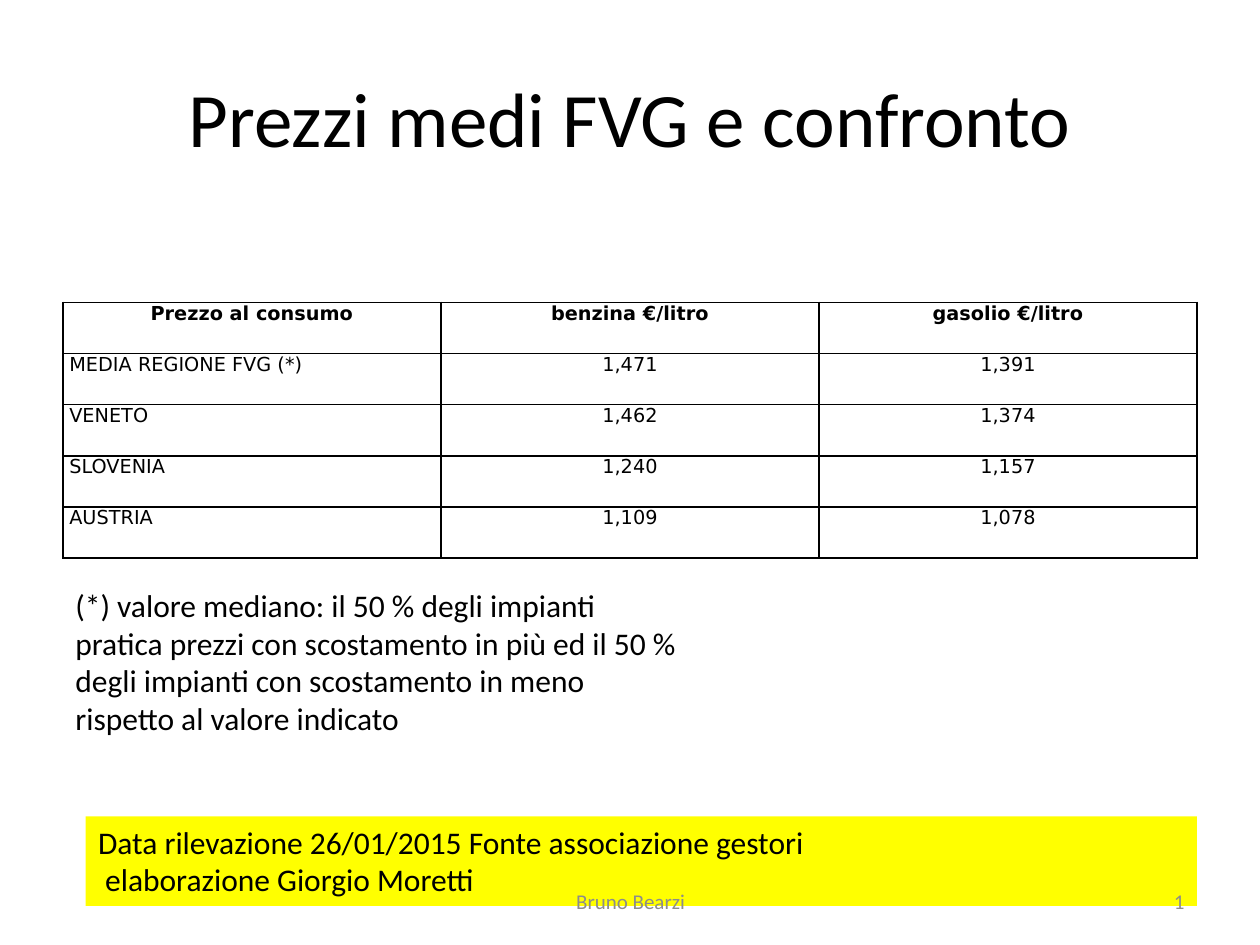
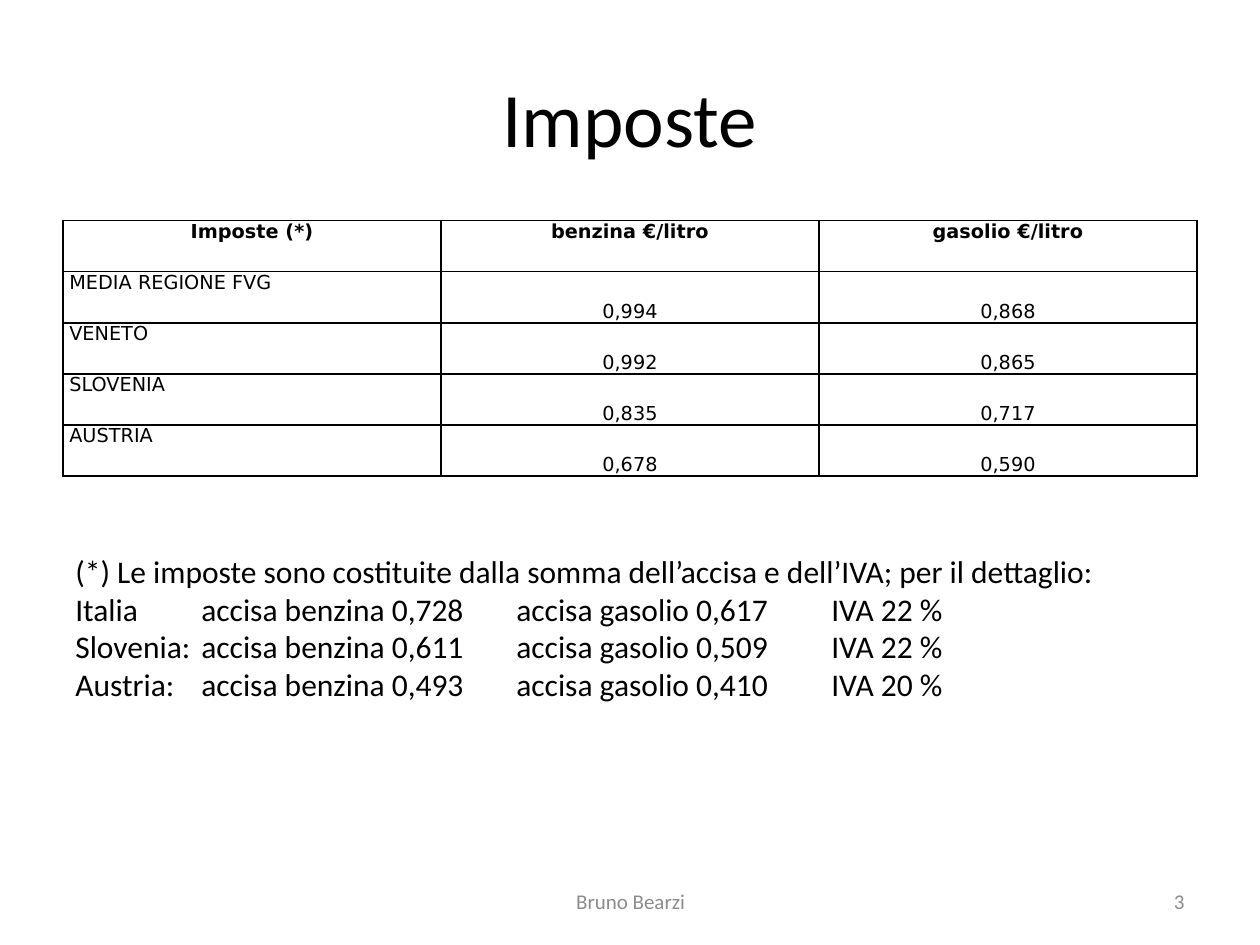
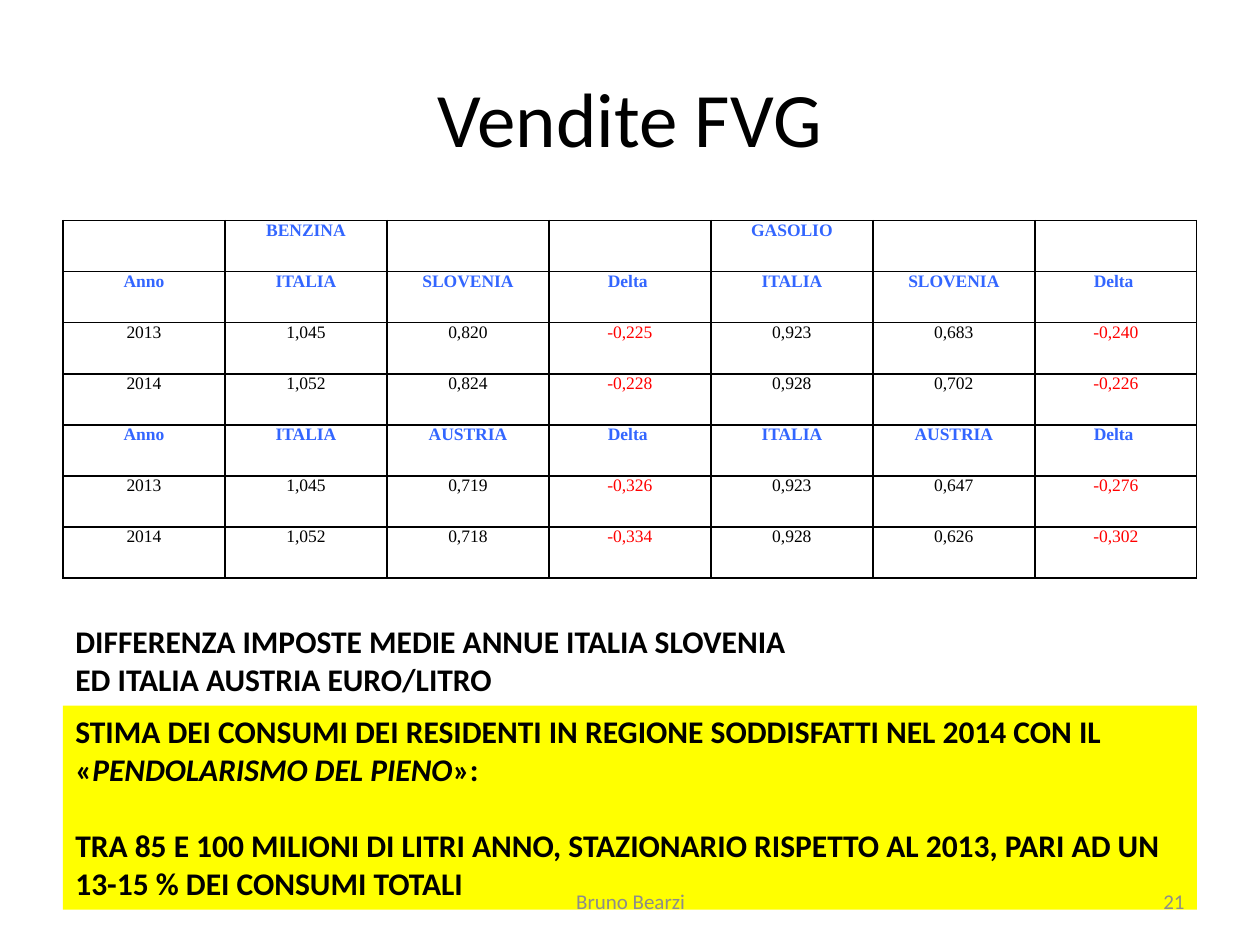
import pptx
import pptx.dml.color
import pptx.enum.shapes
import pptx.enum.text
import pptx.oxml
import pptx.util
from pptx.util import Inches

ALIGN = pptx.enum.text.PP_ALIGN
ANCHOR = pptx.enum.text.MSO_ANCHOR
BLACK, GREY, YELLOW, BLUE, RED = "000000", "8C8C8C", "FFFF00", "3366FF", "FF0000"
MARGIN, CONTENT_WIDTH = 0.5, 9
FOOTER = "Bruno Bearzi"
TAX_TAB_STOPS = (1, 3.5, 6)

FUELS = ["benzina €/litro", "gasolio €/litro"]
PRICES = [
    ["Prezzo al consumo", *FUELS],
    ["MEDIA REGIONE FVG (*)", "1,471", "1,391"],
    ["VENETO", "1,462", "1,374"],
    ["SLOVENIA", "1,240", "1,157"],
    ["AUSTRIA", "1,109", "1,078"],
]
TAXES = [
    ["Imposte (*)", *FUELS],
    ["MEDIA REGIONE FVG", "0,994", "0,868"],
    ["VENETO", "0,992", "0,865"],
    ["SLOVENIA", "0,835", "0,717"],
    ["AUSTRIA", "0,678", "0,590"],
]
SALES = [
    ["", "BENZINA", "", "", "GASOLIO", "", ""],
    ["Anno"] + ["ITALIA", "SLOVENIA", "Delta "] * 2,
    ["2013", "1,045", "0,820", "-0,225", "0,923", "0,683", "-0,240"],
    ["2014", "1,052", "0,824", "-0,228", "0,928", "0,702", "-0,226"],
    ["Anno"] + ["ITALIA", "AUSTRIA", "Delta "] * 2,
    ["2013", "1,045", "0,719", "-0,326", "0,923", "0,647", "-0,276"],
    ["2014", "1,052", "0,718", "-0,334", "0,928", "0,626", "-0,302"],
]
MEDIAN_NOTE = [
    "(*) valore mediano: il 50 % degli impianti pratica prezzi con scostamento in più "
    "ed il 50 % degli impianti con scostamento in meno rispetto al valore indicato"
]
SURVEY_NOTE = [
    "Data rilevazione 26/01/2015 Fonte associazione gestori",
    " elaborazione Giorgio Moretti",
]
TAX_NOTE = [
    "(*) Le imposte sono costituite dalla somma dell’accisa e dell’IVA; per il dettaglio:",
    "Italia \taccisa benzina 0,728\taccisa gasolio 0,617\tIVA 22 %",
    "Slovenia:\taccisa benzina 0,611\taccisa gasolio 0,509\tIVA 22 %",
    "Austria:\taccisa benzina 0,493\taccisa gasolio 0,410\tIVA 20 %",
]
DIFFERENCE_NOTE = [
    "DIFFERENZA IMPOSTE MEDIE ANNUE ITALIA SLOVENIA",
    "ED ITALIA AUSTRIA EURO/LITRO",
]
ESTIMATE_NOTE = [
    [
        ("STIMA DEI CONSUMI DEI RESIDENTI IN REGIONE SODDISFATTI NEL 2014 CON IL «", False),
        ("PENDOLARISMO DEL PIENO", True),
        ("»:", False),
    ],
    "TRA 85 E 100 MILIONI DI LITRI ANNO, STAZIONARIO RISPETTO AL 2013, PARI AD UN "
    "13-15 % DEI CONSUMI TOTALI",
]


def color(value):
    return pptx.dml.color.RGBColor.from_string(value)


def add_span(para, text, size, font="Calibri", ink=BLACK, bold=False, italic=False):
    span = para.add_run()
    span.text = text
    span.font.size = pptx.util.Pt(size)
    span.font.name = font
    span.font.color.rgb = color(ink)
    span.font.bold = bold
    span.font.italic = italic


def add_text(page, place, lines, size=18, ink=BLACK, bold=False, align=ALIGN.LEFT,
             anchor=ANCHOR.TOP, fill=None, gap=0, tab_stops=()):
    bounds = [Inches(length) for length in place]
    if fill:
        box = page.shapes.add_shape(pptx.enum.shapes.MSO_SHAPE.RECTANGLE, *bounds)
        box.shadow.inherit = False
        box.fill.solid()
        box.fill.fore_color.rgb = color(fill)
        box.line.fill.background()
    else:
        box = page.shapes.add_textbox(*bounds)
    frame = box.text_frame
    frame.word_wrap = True
    frame.vertical_anchor = anchor
    for index, line in enumerate(lines):
        para = frame.add_paragraph() if index else frame.paragraphs[0]
        para.alignment = align
        if index and gap:
            para.space_before = pptx.util.Pt(gap)
        if "\t" in line:
            add_tab_stops(para, tab_stops)
        spans = [(line, False)] if isinstance(line, str) else line
        for text, italic in spans:
            add_span(para, text, size, ink=ink, bold=bold, italic=italic)


def add_tab_stops(para, stops):
    properties = para._p.get_or_add_pPr()
    tabs = pptx.oxml.parse_xml(
        '<a:tabLst xmlns:a="http://schemas.openxmlformats.org/drawingml/2006/main">'
        + "".join(f'<a:tab pos="{Inches(stop)}" algn="l"/>' for stop in stops)
        + "</a:tabLst>")
    properties.append(tabs)


def add_borders(cell):
    properties = cell._tc.get_or_add_tcPr()
    for index, side in enumerate(("lnL", "lnR", "lnT", "lnB")):
        properties.insert(index, pptx.oxml.parse_xml(
            f'<a:{side} xmlns:a="http://schemas.openxmlformats.org/drawingml/2006/main" '
            f'w="12700"><a:solidFill><a:srgbClr val="{BLACK}"/></a:solidFill></a:{side}>'))


def fuel_style(row, column, text):
    align = ALIGN.LEFT if row and not column else ALIGN.CENTER
    return align, dict(size=11, font="DejaVu Sans", bold=row == 0)


def sales_style(row, column, text):
    heading = SALES[row][0] in ("", "Anno")
    ink = BLUE if heading else RED if text.startswith("-") else BLACK
    return ALIGN.CENTER, dict(size=10, font="Times New Roman", ink=ink, bold=heading)


def add_grid(page, top, height, rows, style, value_anchor=ANCHOR.TOP):
    table = page.shapes.add_table(
        len(rows), len(rows[0]), Inches(MARGIN), Inches(top),
        Inches(CONTENT_WIDTH), Inches(height)).table
    table.first_row = table.horz_banding = False
    for r, row in enumerate(rows):
        for c, text in enumerate(row):
            cell = table.cell(r, c)
            cell.margin_left = cell.margin_right = Inches(0.05)
            cell.margin_top = cell.margin_bottom = 0
            cell.vertical_anchor = value_anchor if r and c else ANCHOR.TOP
            cell.fill.background()
            add_borders(cell)
            align, font = style(r, c, text)
            para = cell.text_frame.paragraphs[0]
            para.alignment = align
            if text:
                add_span(para, text, **font)


def add_page(deck, title):
    page = deck.slides.add_slide(deck.slide_layouts[6])
    add_text(page, (MARGIN, 0.3, CONTENT_WIDTH, 1.25), [title], size=44,
             align=ALIGN.CENTER, anchor=ANCHOR.MIDDLE)
    return page


def add_footer(page, number):
    for place, text, align in (
        ((7.17, 6.95, 2.33, 0.4), str(number), ALIGN.RIGHT),
        ((3.42, 6.95, 3.17, 0.4), FOOTER, ALIGN.CENTER),
    ):
        add_text(page, place, [text], size=12, ink=GREY, align=align, anchor=ANCHOR.MIDDLE)


def main():
    deck = pptx.Presentation()
    deck.slide_width, deck.slide_height = Inches(10), Inches(7.5)

    page = add_page(deck, "Prezzi medi FVG e confronto")
    add_grid(page, 2.4, 2.03, PRICES, fuel_style)
    add_text(page, (0.68, 6.48, 8.82, 0.71), SURVEY_NOTE, fill=YELLOW)
    add_text(page, (MARGIN, 4.6, 5, 1.31), MEDIAN_NOTE)
    add_footer(page, 1)

    page = add_page(deck, "Imposte")
    add_grid(page, 1.75, 2.03, TAXES, fuel_style, ANCHOR.BOTTOM)
    add_text(page, (MARGIN, 4.33, CONTENT_WIDTH, 1.31), TAX_NOTE, tab_stops=TAX_TAB_STOPS)
    add_footer(page, 3)

    page = add_page(deck, "Vendite FVG")
    add_grid(page, 1.75, 2.84, SALES, sales_style)
    add_text(page, (MARGIN, 4.89, CONTENT_WIDTH, 0.71), DIFFERENCE_NOTE, bold=True)
    add_text(page, (MARGIN, 5.6, CONTENT_WIDTH, 1.62), ESTIMATE_NOTE, bold=True,
             fill=YELLOW, gap=22)
    add_footer(page, 21)

    deck.save("out.pptx")


if __name__ == "__main__":
    main()
